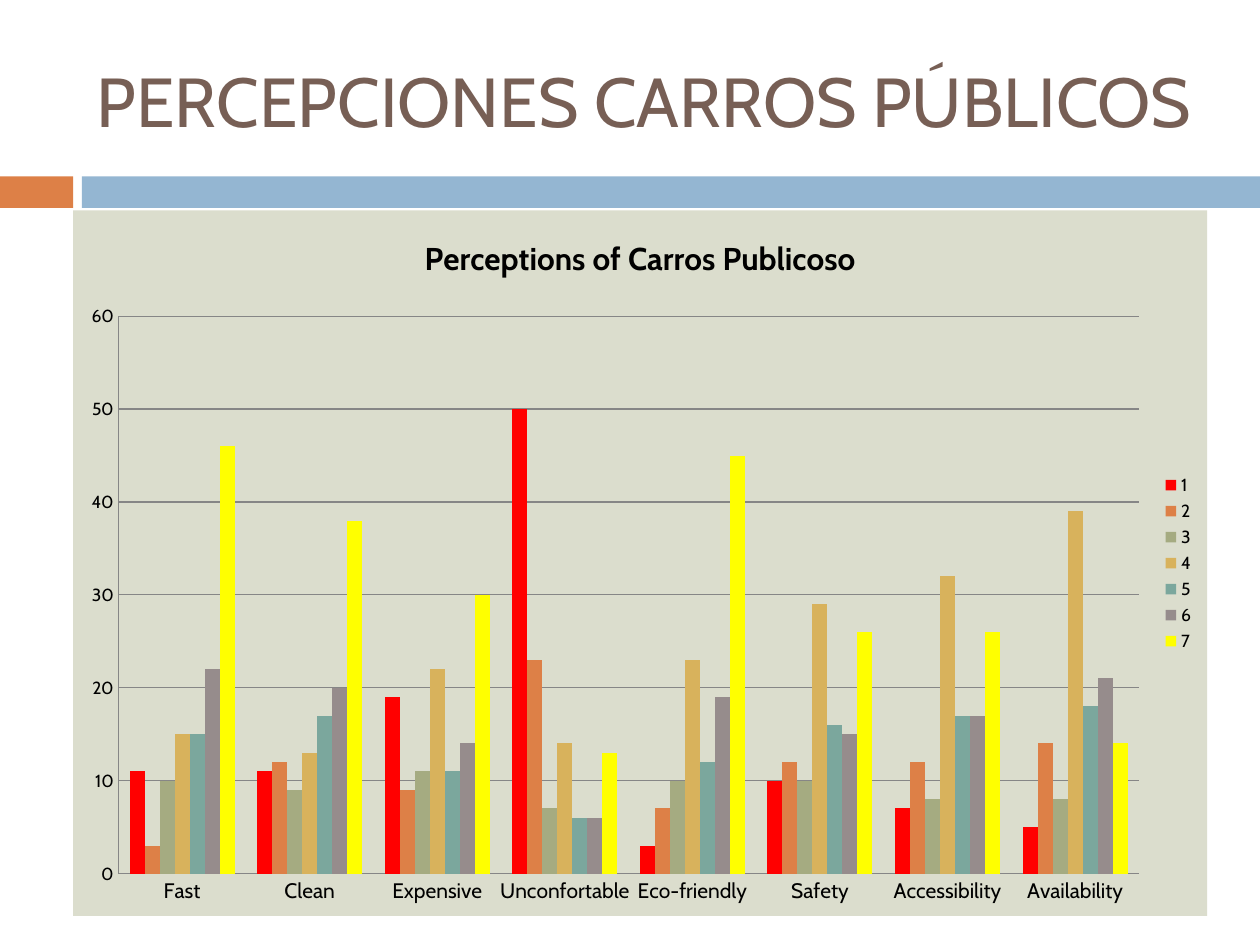
import pptx
import pptx.chart.data
import pptx.dml.color
import pptx.enum.chart
import pptx.enum.shapes
import pptx.enum.text
import pptx.oxml
import pptx.oxml.ns
import pptx.util
from dataclasses import dataclass

Inches = pptx.util.Inches
Pt = pptx.util.Pt


@dataclass(frozen=True)
class Theme:
    font: str = "Cabin"
    title: str = "775F55"
    accent: str = "DD8047"
    band: str = "94B6D2"
    panel: str = "DBDDCD"
    ink: str = "000000"
    grid: str = "868686"
    bars: tuple = ("FF0000", "DD8047", "A5AB81", "D8B25C",
                   "7BA79D", "968C8C", "FFFF00")
    head_pt: float = 39.6
    chart_pt: float = 18
    label_pt: float = 12
    small_pt: float = 10


THEME = Theme()

TRAITS = ("Fast", "Clean", "Expensive", "Unconfortable",
          "Eco-friendly", "Safety", "Accessibility", "Availability")
SCORES = {
    "1": (11, 11, 19, 50, 3, 10, 7, 5),
    "2": (3, 12, 9, 23, 7, 12, 12, 14),
    "3": (10, 9, 11, 7, 10, 10, 8, 8),
    "4": (15, 13, 22, 14, 23, 29, 32, 39),
    "5": (15, 17, 11, 6, 12, 16, 17, 18),
    "6": (22, 20, 14, 6, 19, 15, 17, 21),
    "7": (46, 38, 30, 13, 45, 26, 26, 14),
}


def rgb(code):
    return pptx.dml.color.RGBColor.from_string(code)


def set_font(font, size, color, bold=False):
    font.name = THEME.font
    font.size = Pt(size)
    font.bold = bold
    font.color.rgb = rgb(color)


def add_bar(slide, left, width, color):
    bar = slide.shapes.add_shape(
        pptx.enum.shapes.MSO_SHAPE.RECTANGLE,
        Inches(left), Inches(1.4), Inches(width), Inches(0.25))
    bar.shadow.inherit = False
    bar.fill.solid()
    bar.fill.fore_color.rgb = rgb(color)
    bar.line.fill.background()


def add_title(slide, text):
    box = slide.shapes.add_textbox(
        Inches(0.67), Inches(0.25), Inches(8.92), Inches(1.08))
    frame = box.text_frame
    frame.word_wrap = True
    frame.margin_right = 0
    frame.vertical_anchor = pptx.enum.text.MSO_ANCHOR.MIDDLE
    line = frame.paragraphs[0]
    line.text = text
    set_font(line.font, THEME.head_pt, THEME.title)


def fill_panel(chart):
    """Paint the chart area, which has no public fill property."""
    ns = pptx.oxml.ns.nsdecls("c", "a")
    panel = pptx.oxml.parse_xml(
        f'<c:spPr {ns}><a:solidFill><a:srgbClr val="{THEME.panel}"/>'
        '</a:solidFill><a:ln><a:noFill/></a:ln></c:spPr>')
    chart.element.find(pptx.oxml.ns.qn("c:chart")).addnext(panel)


def place_plot(chart, **share):
    """Fix the inner plot area as shares of the chart area."""
    ns = pptx.oxml.ns.nsdecls("c")
    rules = '<c:xMode val="edge"/><c:yMode val="edge"/>' + "".join(
        f'<c:{key} val="{val}"/>' for key, val in share.items())
    layout = pptx.oxml.parse_xml(
        f'<c:layout {ns}><c:manualLayout><c:layoutTarget val="inner"/>'
        f'{rules}</c:manualLayout></c:layout>')
    area = chart.element.find(".//" + pptx.oxml.ns.qn("c:plotArea"))
    old = area.find(pptx.oxml.ns.qn("c:layout"))
    if old is not None:
        area.remove(old)
    area.insert(0, layout)


def style_axis(axis, size):
    axis.major_tick_mark = pptx.enum.chart.XL_TICK_MARK.NONE
    axis.minor_tick_mark = pptx.enum.chart.XL_TICK_MARK.NONE
    axis.format.line.color.rgb = rgb(THEME.grid)
    axis.format.line.width = Pt(0.75)
    set_font(axis.tick_labels.font, size, THEME.ink)


def style_axes(chart):
    style_axis(chart.category_axis, THEME.label_pt)
    axis = chart.value_axis
    style_axis(axis, THEME.small_pt)
    axis.minimum_scale, axis.maximum_scale, axis.major_unit = 0, 60, 10
    axis.has_major_gridlines = True
    line = axis.major_gridlines.format.line
    line.color.rgb = rgb(THEME.grid)
    line.width = Pt(0.75)


def style_bars(plot):
    plot.vary_by_categories = False
    plot.gap_width = 150
    plot.overlap = 0
    for bars, color in zip(plot.series, THEME.bars):
        bars.format.fill.solid()
        bars.format.fill.fore_color.rgb = rgb(color)


def add_chart(slide, title):
    data = pptx.chart.data.CategoryChartData()
    data.categories = TRAITS
    for name, vals in SCORES.items():
        data.add_series(name, vals)
    chart = slide.shapes.add_chart(
        pptx.enum.chart.XL_CHART_TYPE.COLUMN_CLUSTERED,
        Inches(0.58), Inches(1.67), Inches(9), Inches(5.6), data).chart
    set_font(chart.font, THEME.small_pt, THEME.ink)
    fill_panel(chart)
    place_plot(chart, x=0.04, y=0.15, w=0.9, h=0.79)
    chart.has_title = True
    line = chart.chart_title.text_frame.paragraphs[0]
    line.text = title
    set_font(line.font, THEME.chart_pt, THEME.ink, bold=True)
    chart.has_legend = True
    chart.legend.position = pptx.enum.chart.XL_LEGEND_POSITION.RIGHT
    chart.legend.include_in_layout = False
    set_font(chart.legend.font, THEME.small_pt, THEME.ink)
    style_axes(chart)
    style_bars(chart.plots[0])


def main():
    deck = pptx.Presentation()
    deck.slide_width, deck.slide_height = Inches(10), Inches(7.5)
    slide = deck.slides.add_slide(deck.slide_layouts[6])
    add_bar(slide, 0, 0.58, THEME.accent)
    add_bar(slide, 0.65, 9.35, THEME.band)
    add_title(slide, "PERCEPCIONES CARROS PÚBLICOS")
    add_chart(slide, "Perceptions of Carros Publicoso")
    deck.save("out.pptx")


if __name__ == "__main__":
    main()
